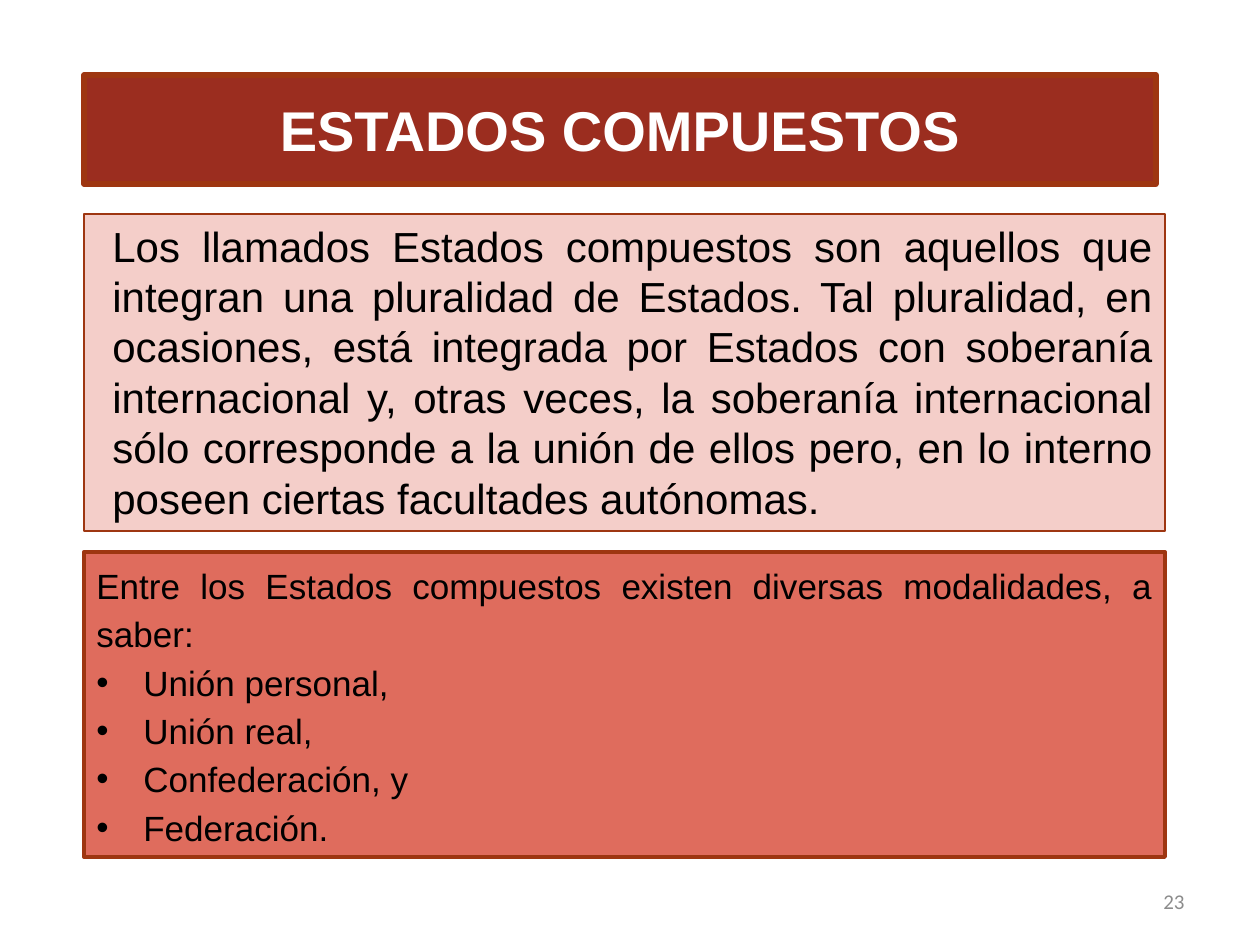
from lxml import etree
from pptx import Presentation
from pptx.dml.color import RGBColor
from pptx.enum.shapes import MSO_SHAPE
from pptx.enum.text import MSO_ANCHOR, PP_ALIGN
from pptx.oxml.ns import qn
from pptx.util import Emu, Pt

RECTANGLE = MSO_SHAPE.RECTANGLE
TOP, MIDDLE = MSO_ANCHOR.TOP, MSO_ANCHOR.MIDDLE
CENTER, RIGHT, JUSTIFY = PP_ALIGN.CENTER, PP_ALIGN.RIGHT, PP_ALIGN.JUSTIFY
PX = 914400 // 126
BORDER = "9E3611"
DEFINITION = (
    "Los llamados Estados compuestos son aquellos que integran una pluralidad de Estados. "
    "Tal pluralidad, en ocasiones, está integrada por Estados con soberanía internacional y, "
    "otras veces, la soberanía internacional sólo corresponde a la unión de ellos pero, "
    "en lo interno poseen ciertas facultades autónomas."
)
MODALITIES = ["Unión personal,", "Unión real,", "Confederación, y", "Federación."]


def px(length):
    return Emu(length * PX)


def color(value):
    return RGBColor.from_string(value)


class SlideBuilder:
    font = "Arial"
    ink = "000000"

    def __init__(self, page):
        self.page = page

    def panel(self, left, top, width, height, fill, line_width, anchor=TOP):
        box = self.page.shapes.add_shape(RECTANGLE, px(left), px(top), px(width), px(height))
        box.shadow.inherit = False
        box.fill.solid()
        box.fill.fore_color.rgb = color(fill)
        box.line.color.rgb = color(BORDER)
        box.line.width = Pt(line_width)
        return self.prepare(box, anchor)

    def label(self, left, top, width, height):
        box = self.page.shapes.add_textbox(px(left), px(top), px(width), px(height))
        return self.prepare(box, MIDDLE)

    def prepare(self, box, anchor):
        frame = box.text_frame
        frame.word_wrap = True
        frame.vertical_anchor = anchor
        return frame

    def paragraph(self, frame, text, size, align=JUSTIFY, ink=ink, font=font,
                  bold=False, spacing=1.0, margin=0, bullet=None):
        first = frame.paragraphs[0]
        para = frame.add_paragraph() if first.runs else first
        para.alignment = align
        para.line_spacing = spacing
        span = para.add_run()
        span.text = text
        span.font.size = Pt(size)
        span.font.name = font
        span.font.bold = bold
        span.font.color.rgb = color(ink)
        properties = para._p.get_or_add_pPr()
        properties.set("marL", str(px(margin)))
        if bullet:
            properties.set("indent", str(px(-margin)))
            etree.SubElement(properties, qn("a:buFont")).set("typeface", font)
            etree.SubElement(properties, qn("a:buChar")).set("char", bullet)


def main():
    deck = Presentation()
    deck.slide_width, deck.slide_height = px(1260), px(945)
    builder = SlideBuilder(deck.slides.add_slide(deck.slide_layouts[6]))

    title = builder.panel(84, 75, 1072, 109, "9B2D1F", 3, MIDDLE)
    builder.paragraph(title, "ESTADOS COMPUESTOS", 32, CENTER, "FFFFFF", bold=True)

    definition = builder.panel(84, 214, 1081, 317, "F4CEC9", 0.75)
    builder.paragraph(definition, DEFINITION, 24, margin=16)

    number = builder.label(903, 876, 294, 50)
    builder.paragraph(number, "23", 12, RIGHT, "8C8C8C", "Calibri")

    modalities = builder.panel(84, 552, 1081, 305, "DF6C5D", 2.25)
    builder.paragraph(modalities, "Entre los Estados compuestos existen diversas modalidades, a saber:",
                      20, spacing=1.15)
    for modality in MODALITIES:
        builder.paragraph(modalities, modality, 20, spacing=1.15, margin=47, bullet="•")

    deck.save("out.pptx")


if __name__ == "__main__":
    main()
